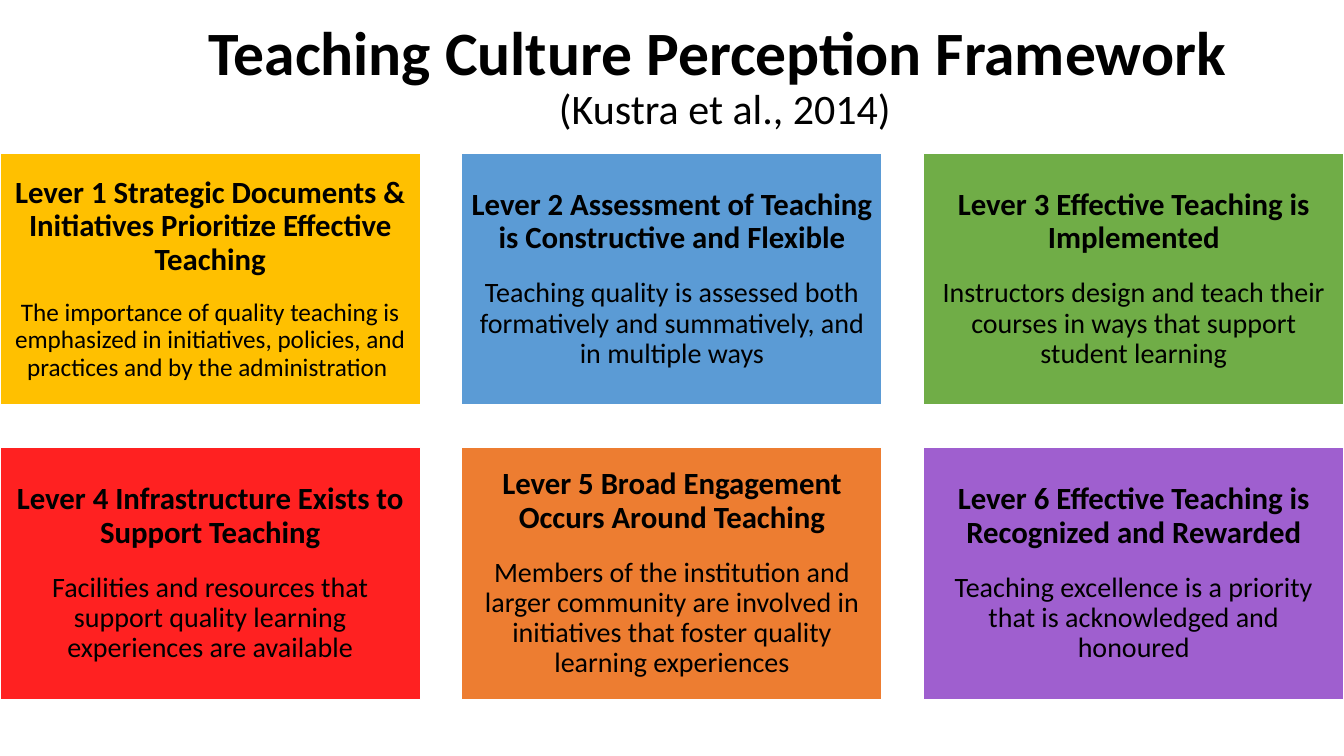
from dataclasses import dataclass

from pptx import Presentation
from pptx.dml.color import RGBColor
from pptx.enum.shapes import MSO_SHAPE
from pptx.enum.text import MSO_ANCHOR, PP_ALIGN
from pptx.slide import Slide
from pptx.text.text import _Paragraph
from pptx.util import Inches, Pt

FONT = "Calibri"
BLACK = "000000"
WHITE = "FFFFFF"
COLUMNS = 3
CARD_WIDTH, CARD_HEIGHT = 4.17, 2.5
COLUMN_PITCH, ROW_PITCH = 4.58, 2.92
CARDS_TOP = 1.52
CARD_INSET = 0.09


@dataclass(frozen=True)
class Lever:
    heading: str
    description: str
    fill: str
    description_size: int = 20


LEVERS = [
    Lever("Lever 1 Strategic Documents & Initiatives Prioritize Effective Teaching",
          "The importance of quality teaching is emphasized in initiatives, policies, "
          "and practices and by the administration ", "FFC000", 18),
    Lever("Lever 2 Assessment of Teaching is Constructive and Flexible",
          "Teaching quality is assessed both formatively and summatively, "
          "and in multiple ways", "5B9BD5"),
    Lever("Lever 3 Effective Teaching is Implemented",
          "Instructors design and teach their courses in ways that support "
          "student learning", "70AD47"),
    Lever("Lever 4 Infrastructure Exists to Support Teaching",
          "Facilities and resources that support quality learning experiences "
          "are available", "FF2121"),
    Lever("Lever 5 Broad Engagement Occurs Around Teaching",
          "Members of the institution and larger community are involved in "
          "initiatives that foster quality learning experiences", "ED7D31"),
    Lever("Lever 6 Effective Teaching is Recognized and Rewarded",
          "Teaching excellence is a priority that is acknowledged and honoured",
          "9F5FCF"),
]


def color(hex_value: str) -> RGBColor:
    return RGBColor.from_string(hex_value)


def add_text(paragraph: _Paragraph, text: str, *, size: int, bold: bool = False,
             space_after: float = 0) -> None:
    """Append a run to a centred paragraph."""
    paragraph.alignment = PP_ALIGN.CENTER
    paragraph.line_spacing = 0.9
    paragraph.space_before = Pt(0)
    paragraph.space_after = Pt(space_after)
    run = paragraph.add_run()
    run.text = text
    run.font.name = FONT
    run.font.size = Pt(size)
    run.font.bold = bold
    run.font.color.rgb = color(BLACK)


def add_title(slide: Slide) -> None:
    title = slide.shapes.title
    title.left, title.top = Inches(1.44), Inches(0.05)
    title.width, title.height = Inches(11.5), Inches(1.45)
    title.text_frame.vertical_anchor = MSO_ANCHOR.MIDDLE
    title.text_frame.word_wrap = True
    heading = title.text_frame.paragraphs[0]
    add_text(heading, "Teaching Culture Perception Framework ", size=44, bold=True)
    heading.add_line_break()
    add_text(heading, "(Kustra et al., 2014)", size=30)


def add_lever_card(slide: Slide, lever: Lever, left: float, top: float) -> None:
    card = slide.shapes.add_shape(MSO_SHAPE.RECTANGLE, Inches(left), Inches(top),
                                  Inches(CARD_WIDTH), Inches(CARD_HEIGHT))
    card.shadow.inherit = False
    card.fill.solid()
    card.fill.fore_color.rgb = color(lever.fill)
    card.line.color.rgb = color(WHITE)
    card.line.width = Pt(1)
    frame = card.text_frame
    frame.word_wrap = True
    frame.vertical_anchor = MSO_ANCHOR.MIDDLE
    frame.margin_left = frame.margin_right = Inches(CARD_INSET)
    frame.margin_top = frame.margin_bottom = Inches(CARD_INSET)
    add_text(frame.paragraphs[0], lever.heading, size=22, bold=True, space_after=16.5)
    add_text(frame.add_paragraph(), lever.description, size=lever.description_size)


def main() -> None:
    presentation = Presentation()
    presentation.slide_width = Inches(13.33)
    presentation.slide_height = Inches(7.5)
    slide = presentation.slides.add_slide(presentation.slide_layouts.get_by_name("Title Only"))
    add_title(slide)
    for index, lever in enumerate(LEVERS):
        row, column = divmod(index, COLUMNS)
        add_lever_card(slide, lever, column * COLUMN_PITCH, CARDS_TOP + row * ROW_PITCH)
    presentation.save("out.pptx")


if __name__ == "__main__":
    main()
